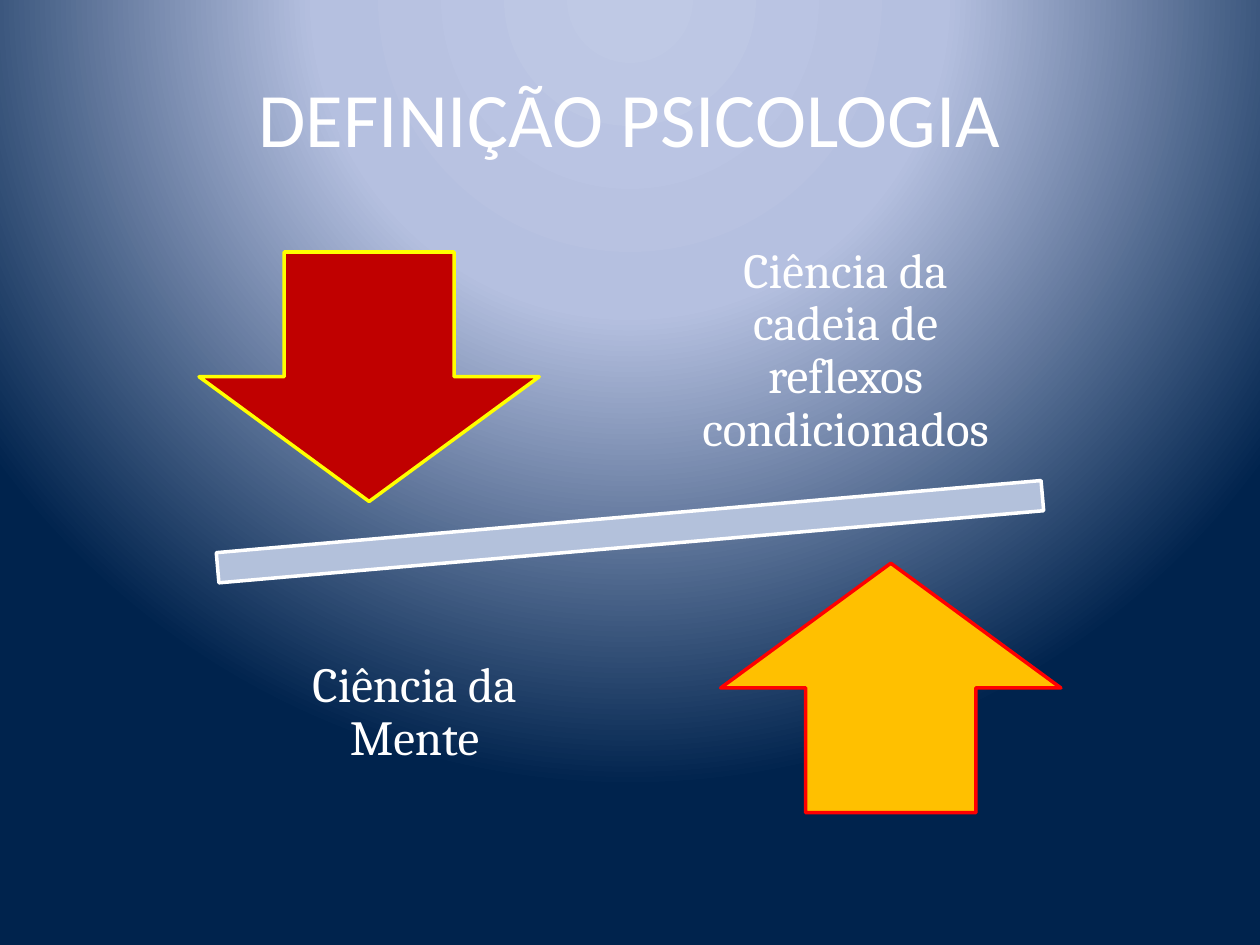
import pptx
import pptx.util
import pptx.oxml
import pptx.oxml.ns
from pptx.dml.color import RGBColor
from pptx.enum.shapes import MSO_SHAPE
from pptx.enum.text import MSO_ANCHOR, PP_ALIGN
from pptx.util import Inches

HUES = {
    "white": "FFFFFF", "glow": "BFC9E5", "mist": "B5C0E0", "navy": "00234D",
    "beam": "B3C1DB", "red": "C00000", "yellow": "FFFF00",
    "gold": "FFC000", "scarlet": "FF0000",
}


def write(frame, text, size=28, font="Cambria", hue="white", lead=None, pad=None):
    frame.word_wrap = True
    frame.vertical_anchor = MSO_ANCHOR.MIDDLE
    if pad is not None:
        frame.margin_left = frame.margin_right = Inches(pad)
        frame.margin_top = frame.margin_bottom = Inches(pad)
    para = frame.paragraphs[0]
    para.alignment = PP_ALIGN.CENTER
    para.line_spacing = lead
    run = para.add_run()
    run.text = text
    run.font.size = pptx.util.Pt(size)
    run.font.name = font
    run.font.color.rgb = RGBColor.from_string(HUES[hue])


deck = pptx.Presentation()
deck.slide_width, deck.slide_height = Inches(10), Inches(7.5)
slide = deck.slides.add_slide(deck.slide_layouts[5])

# Radial background, centred above the slide
slide.background.fill.gradient()
grad = slide.element.xpath(".//p:bg//a:gradFill")[0]
stops = "".join(
    f'<a:gs pos="{pos * 1000}"><a:srgbClr val="{HUES[hue]}"/></a:gs>'
    for pos, hue in ((0, "glow"), (40, "mist"), (100, "navy"))
)
radial = pptx.oxml.parse_xml(
    f'<a:gradFill {pptx.oxml.ns.nsdecls("a")} rotWithShape="1"><a:gsLst>{stops}</a:gsLst>'
    '<a:path path="circle">'
    '<a:fillToRect l="50000" t="-80000" r="50000" b="180000"/>'
    "</a:path></a:gradFill>"
)
grad.getparent().replace(grad, radial)

# Title
title = slide.shapes.title
title.left, title.top = Inches(0.5), Inches(0.3)
title.width, title.height = Inches(9), Inches(1.25)
write(title.text_frame, "DEFINIÇÃO PSICOLOGIA", size=44, font="Calibri")

# Tilted beam and the two arrows
scale = slide.shapes.add_group_shape().shapes
parts = [
    (MSO_SHAPE.MATH_MINUS, (0.53, 3.71, 8.94, 1.02), 355, "beam", "white"),
    (MSO_SHAPE.DOWN_ARROW, (1.58, 2, 2.7, 1.98), 0, "red", "yellow"),
    (MSO_SHAPE.UP_ARROW, (5.72, 4.47, 2.7, 1.98), 0, "gold", "scarlet"),
]
for kind, box, turn, fill, edge in parts:
    shape = scale.add_shape(kind, *map(Inches, box))
    shape.rotation = turn
    shape.shadow.inherit = False
    shape.fill.solid()
    shape.fill.fore_color.rgb = RGBColor.from_string(HUES[fill])
    shape.line.color.rgb = RGBColor.from_string(HUES[edge])
    shape.line.width = pptx.util.Pt(2)

# Labels opposite the arrows
labels = [
    ("Ciência da cadeia de reflexos condicionados", 5.27, 1.75),
    ("Ciência da Mente", 1.85, 4.62),
]
for text, left, top in labels:
    label = scale.add_textbox(Inches(left), Inches(top), Inches(2.88), Inches(2.08))
    write(label.text_frame, text, lead=0.9, pad=0.22)

deck.save("out.pptx")
